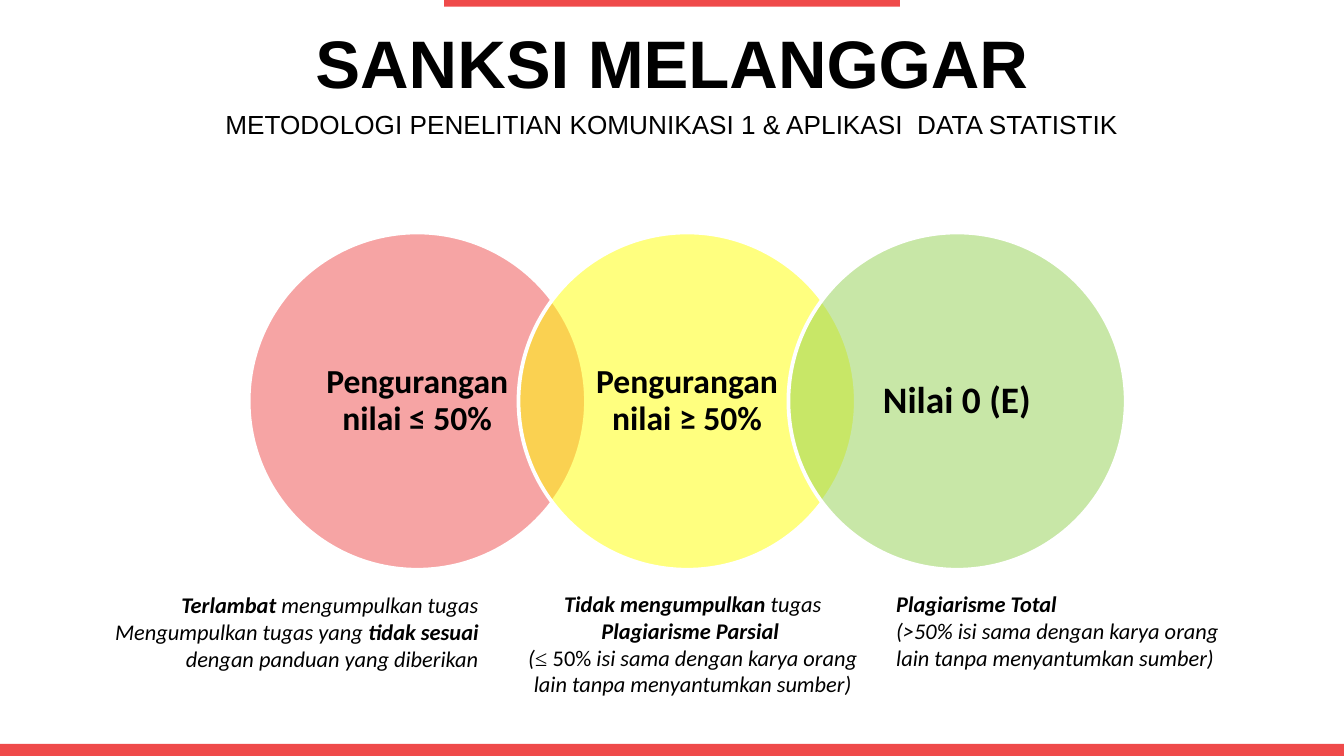
from lxml import etree
from pptx import Presentation
from pptx import util as u
from pptx.dml.color import RGBColor
from pptx.enum import shapes, text
from pptx.oxml.ns import qn

RED = RGBColor(0xEF, 0x4A, 0x4A)
YELLOW = RGBColor(0xFF, 0xFF, 0x00)
GREEN = RGBColor(0x92, 0xD0, 0x50)
BLACK = RGBColor(0, 0, 0)
WHITE = RGBColor(0xFF, 0xFF, 0xFF)
LEFT, CENTER, RIGHT = text.PP_ALIGN.LEFT, text.PP_ALIGN.CENTER, text.PP_ALIGN.RIGHT

prs = Presentation()
prs.slide_width, prs.slide_height = u.Inches(10), u.Inches(5.625)
W, H = prs.slide_width, prs.slide_height
s = prs.slides.add_slide(prs.slide_layouts[5])


def add_filled(kind, x, y, w, h, color):
    sp = s.shapes.add_shape(kind, x, y, w, h)
    sp.shadow.inherit = False
    sp.fill.solid()
    sp.fill.fore_color.rgb = color
    sp.line.fill.background()
    return sp


def style(p, size, name, align, bold=None, italic=None):
    p.alignment = align
    f = p.font
    f.size, f.name, f.bold, f.italic = u.Pt(size), name, bold, italic
    f.color.rgb = BLACK


# Red bars at the top and bottom edges
top_w, bottom_h = int(W * 0.339), u.Inches(0.09)
add_filled(shapes.MSO_SHAPE.RECTANGLE, (W - top_w) // 2, 0, top_w, u.Inches(0.05), RED)
add_filled(shapes.MSO_SHAPE.RECTANGLE, 0, H - bottom_h, W, bottom_h, RED)

# Title and subtitle
title = s.shapes.title
title.left, title.top, title.width, title.height = 0, u.Inches(0.14), W, u.Inches(0.63)
subtitle = s.shapes.add_textbox(0, u.Inches(0.77), W, u.Inches(0.31))
headings = [
    (title, "SANKSI MELANGGAR", 36, True),
    (subtitle, "METODOLOGI PENELITIAN KOMUNIKASI 1 & APLIKASI  DATA STATISTIK", 14, False),
]
for sp, words, size, bold in headings:
    tf = sp.text_frame
    tf.text = words
    tf.word_wrap = True
    tf.auto_size = text.MSO_AUTO_SIZE.NONE
    tf.vertical_anchor = text.MSO_ANCHOR.MIDDLE
    style(tf.paragraphs[0], size, "Arial", CENTER, bold)

# Three overlapping circles, each a fifth of its width over the next
diameter = u.Inches(2.51)
step = int(diameter * 0.8)
circle_x, circle_y = u.Inches(1.85), u.Inches(1.73)
inset = u.Inches(0.37)
penalties = [
    ("Pengurangan nilai ≤ 50%", 18, RED),
    ("Pengurangan nilai ≥ 50%", 18, YELLOW),
    ("Nilai 0 (E)", 20, GREEN),
]
for i, (words, size, color) in enumerate(penalties):
    x = circle_x + i * step
    sp = add_filled(shapes.MSO_SHAPE.OVAL, x, circle_y, diameter, diameter, color)
    sp.line.color.rgb = WHITE
    sp.line.width = u.Pt(2)
    fill_color = sp.fill._xPr.find(qn("a:solidFill"))[0]
    etree.SubElement(fill_color, qn("a:alpha"), val="50000")

    side = diameter - 2 * inset
    tf = s.shapes.add_textbox(x + inset, circle_y + inset, side, side).text_frame
    tf.text = words
    tf.word_wrap = True
    tf.vertical_anchor = text.MSO_ANCHOR.MIDDLE
    tf.margin_left = tf.margin_right = u.Inches(0.14)
    tf.margin_top = tf.margin_bottom = u.Inches(0.03)
    p = tf.paragraphs[0]
    p.line_spacing = 0.9
    style(p, size, "Calibri", CENTER, True)

# Reasons below the circles: each paragraph is a list of (words, bold) runs
reasons = [
    (0.75, 4.35, 2.91, 0.71, RIGHT, [
        [("Terlambat ", True), ("mengumpulkan tugas", False)],
        [("Mengumpulkan tugas yang ", False), ("tidak sesuai ", True),
         ("dengan panduan yang diberikan", False)],
    ]),
    (3.82, 4.34, 2.67, 0.91, CENTER, [
        [("Tidak mengumpulkan ", True), ("tugas", False)],
        [("Plagiarisme Parsial ", True)],
        [("(", False), ("≤ ", False), ("50% ", False),
         ("isi sama dengan karya orang lain tanpa menyantumkan sumber)", False)],
    ]),
    (6.57, 4.34, 2.6, 0.71, LEFT, [
        [("Plagiarisme Total", True)],
        [("(>50% isi sama dengan karya orang lain tanpa menyantumkan sumber)", False)],
    ]),
]
for x, y, w, h, align, paragraphs in reasons:
    tf = s.shapes.add_textbox(*map(u.Inches, (x, y, w, h))).text_frame
    tf.word_wrap = True
    tf.auto_size = text.MSO_AUTO_SIZE.SHAPE_TO_FIT_TEXT
    for i, runs in enumerate(paragraphs):
        p = tf.add_paragraph() if i else tf.paragraphs[0]
        style(p, 12, "Calibri", align)
        for words, bold in runs:
            r = p.add_run()
            r.text = words
            r.font.bold = bold
            r.font.italic = words != "50% "
            if words == "≤ ":
                r.font.name = "Times New Roman"

prs.save("out.pptx")
